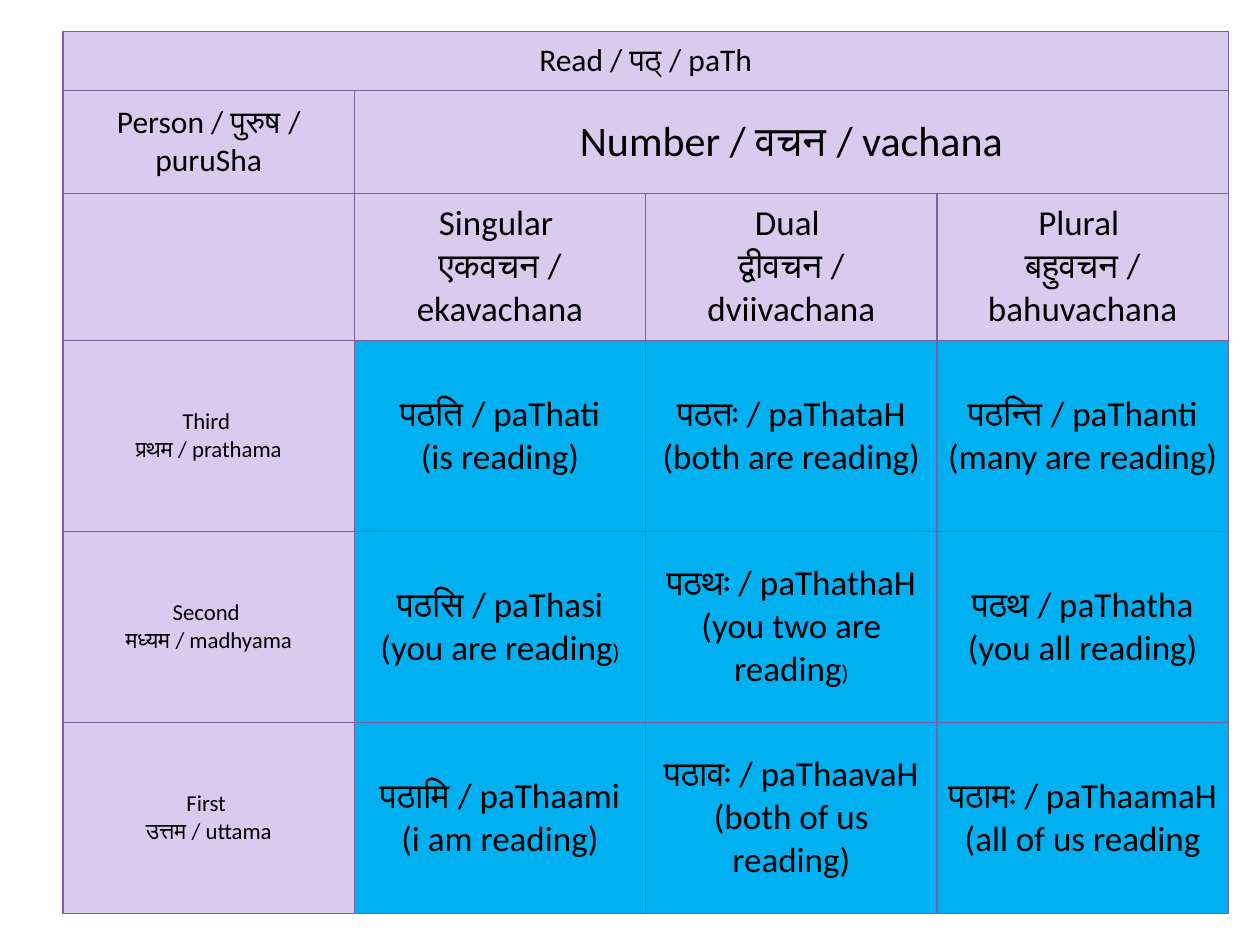
from dataclasses import dataclass

from lxml.etree import SubElement
from pptx import Presentation
from pptx.dml.color import RGBColor as RGB
from pptx.enum.text import MSO_ANCHOR as Anchor, PP_ALIGN as Align
from pptx.oxml.ns import qn
from pptx.util import Pt


@dataclass(frozen=True)
class Theme:
    font: str = "Calibri"
    ink: str = "000000"
    heading_fill: str = "DACAED"
    verb_fill: str = "00B0F0"
    border: str = "7D60A0"
    border_width: float = 0.75
    title_size: int = 18
    number_size: int = 24
    form_size: int = 20
    person_size: int = 13


class SlideBuilder:
    def __init__(self, slide, theme):
        self.slide = slide
        self.theme = theme

    def table(self, left, top, widths, heights):
        frame = self.slide.shapes.add_table(
            len(heights), len(widths), Pt(left), Pt(top), Pt(sum(widths)), Pt(sum(heights))
        )
        grid = frame.table
        for column, width in zip(grid.columns, widths):
            column.width = Pt(width)
        for row, height in zip(grid.rows, heights):
            row.height = Pt(height)
        for cell in grid.iter_cells():
            self.style_cell(cell)
        return grid

    def style_cell(self, cell):
        cell.vertical_anchor = Anchor.MIDDLE
        cell.margin_left = cell.margin_right = Pt(5.4)
        cell.margin_top = cell.margin_bottom = Pt(2.7)
        properties = cell._tc.get_or_add_tcPr()
        for side in ("lnL", "lnR", "lnT", "lnB"):
            line = SubElement(properties, qn(f"a:{side}"), w=str(Pt(self.theme.border_width)))
            fill = SubElement(line, qn("a:solidFill"))
            SubElement(fill, qn("a:srgbClr"), val=self.theme.border)
        self.fill(cell, self.theme.heading_fill)

    def fill(self, cell, color):
        cell.fill.solid()
        cell.fill.fore_color.rgb = RGB.from_string(color)

    def label(self, cell, text, size, small_ending=""):
        paragraph = cell.text_frame.paragraphs[0]
        paragraph.text = text
        paragraph.alignment = Align.CENTER
        paragraph.font.name = self.theme.font
        paragraph.font.size = Pt(size)
        paragraph.font.color.rgb = RGB.from_string(self.theme.ink)
        if small_ending:
            ending = paragraph.add_run()
            ending.text = small_ending
            ending.font.size = Pt(self.theme.person_size)


NUMBERS = ["Singular \nएकवचन / ekavachana", "Dual \nद्वीवचन / dviivachana", "Plural \nबहुवचन / bahuvachana"]
PERSONS = [
    ("Third \nप्रथम / prathama", [
        ("पठति / paThati\n(is reading)",),
        ("पठतः / paThataH\n(both are reading)",),
        ("पठन्ति / paThanti\n(many are reading)",),
    ]),
    ("Second \nमध्यम / madhyama", [
        ("पठसि / paThasi\n(you are reading", ")"),
        ("पठथः / paThathaH\n(you two are reading", ")"),
        ("पठथ / paThatha\n(you all reading)",),
    ]),
    ("First \nउत्तम / uttama", [
        ("पठामि / paThaami\n(i am reading)",),
        ("पठावः / paThaavaH\n(both of us reading)",),
        ("पठामः / paThaamaH\n(all of us reading",),
    ]),
]


def main():
    deck = Presentation()
    deck.slide_width, deck.slide_height = Pt(720), Pt(540)
    theme = Theme()
    builder = SlideBuilder(deck.slides.add_slide(deck.slide_layouts[6]), theme)

    conjugation = builder.table(36, 18, [166.5] * 4, [33.6, 58.8, 84] + [109.2] * 3)
    conjugation.cell(0, 0).merge(conjugation.cell(0, 3))
    conjugation.cell(1, 1).merge(conjugation.cell(1, 3))

    builder.label(conjugation.cell(0, 0), "Read / पठ् / paTh", theme.title_size)
    builder.label(conjugation.cell(1, 0), "Person / पुरुष / puruSha", theme.title_size)
    builder.label(conjugation.cell(1, 1), "Number / वचन / vachana", theme.number_size)
    for column, number in enumerate(NUMBERS, 1):
        builder.label(conjugation.cell(2, column), number, theme.form_size)
    for row, (person, forms) in enumerate(PERSONS, 3):
        builder.label(conjugation.cell(row, 0), person, theme.person_size)
        for column, (form, *ending) in enumerate(forms, 1):
            verb = conjugation.cell(row, column)
            builder.fill(verb, theme.verb_fill)
            builder.label(verb, form, theme.form_size, *ending)

    deck.save("out.pptx")


if __name__ == "__main__":
    main()
